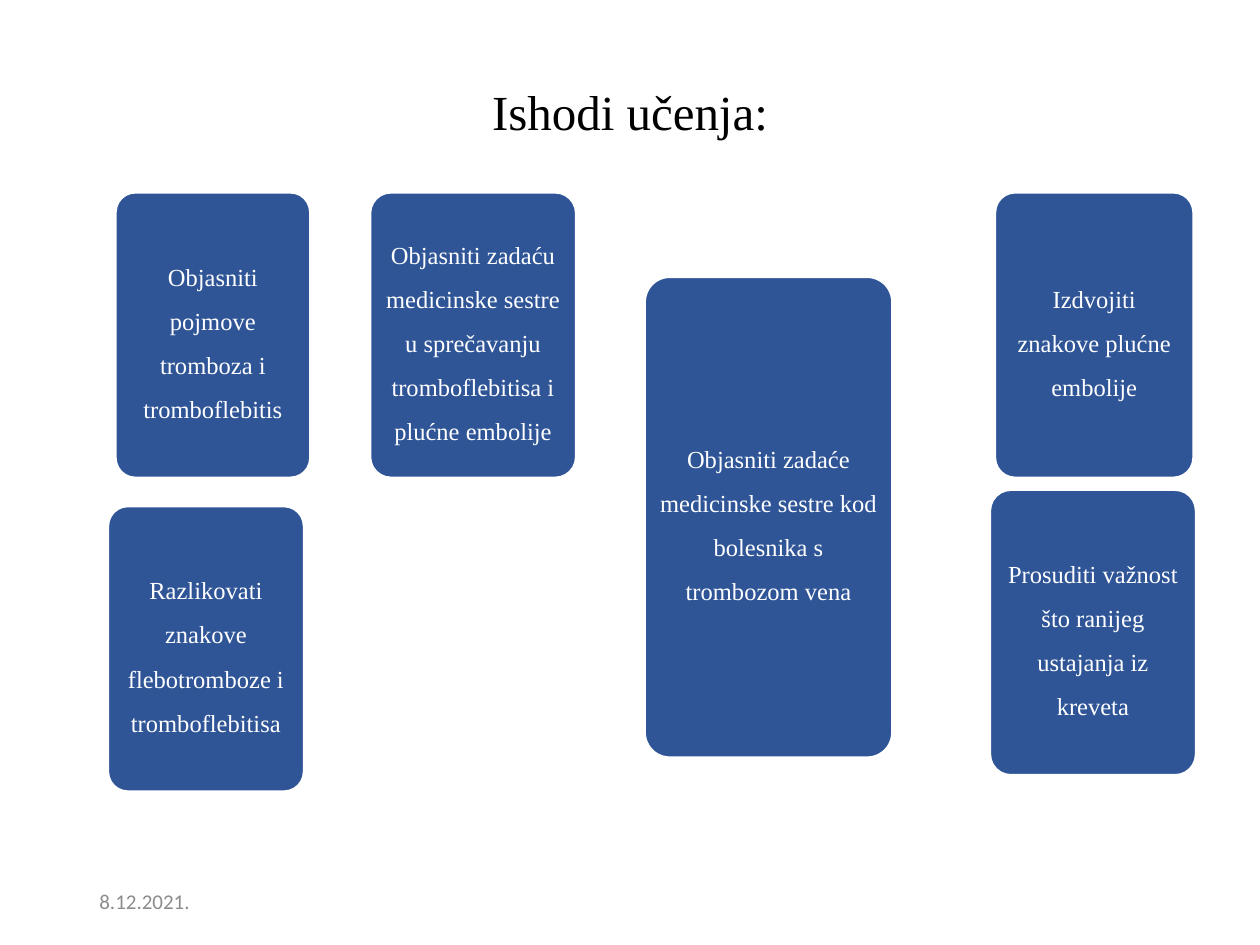
"""Builds the learning outcomes slide."""
from dataclasses import dataclass

from pptx import Presentation
from pptx.dml.color import RGBColor
from pptx.enum.shapes import MSO_SHAPE
from pptx.enum.text import MSO_ANCHOR, PP_ALIGN
from pptx.util import Inches, Pt

ROUNDED = MSO_SHAPE.ROUNDED_RECTANGLE
MIDDLE = MSO_ANCHOR.MIDDLE
LEFT, CENTER = PP_ALIGN.LEFT, PP_ALIGN.CENTER
TITLE_ONLY = 5
CARD_HEIGHT = 2.26
TOP_ROW = 1.53

OUTCOMES = [
    (0.86, 4.02, 1.55, CARD_HEIGHT, "Razlikovati znakove flebotromboze i tromboflebitisa"),
    (2.94, TOP_ROW, 1.63, CARD_HEIGHT,
     "Objasniti zadaću medicinske sestre u sprečavanju tromboflebitisa i plućne embolije"),
    (0.92, TOP_ROW, 1.54, CARD_HEIGHT, "Objasniti pojmove tromboza i tromboflebitis"),
    (7.9, TOP_ROW, 1.57, CARD_HEIGHT, "Izdvojiti znakove plućne embolije"),
    (5.12, 2.2, 1.96, 3.81,
     "Objasniti zadaće medicinske sestre kod bolesnika s trombozom vena"),
    (7.86, 3.89, 1.63, CARD_HEIGHT, "Prosuditi važnost što ranijeg ustajanja iz kreveta"),
]


@dataclass(frozen=True)
class Theme:
    """Holds the colours, fonts and type sizes."""

    card: RGBColor = RGBColor(0x2F, 0x55, 0x97)
    white: RGBColor = RGBColor(0xFF, 0xFF, 0xFF)
    black: RGBColor = RGBColor(0, 0, 0)
    gray: RGBColor = RGBColor(0x8C, 0x8C, 0x8C)
    serif: str = "Times New Roman"
    sans: str = "Calibri"
    title_size: Pt = Pt(28)
    card_size: Pt = Pt(14)
    date_size: Pt = Pt(12)


class SlideBuilder:
    """Adds styled elements to one slide."""

    def __init__(self, slide, theme):
        """Keeps the slide and its theme."""
        self.slide = slide
        self.theme = theme

    def set_text(self, shape, text, color, font, paragraph_format, inset=None):
        """Fills a shape with one formatted paragraph."""
        frame = shape.text_frame
        frame_format = {"text": text, "word_wrap": True, "vertical_anchor": MIDDLE}
        if inset is not None:
            sides = ("left", "top", "right", "bottom")
            frame_format.update({f"margin_{side}": Inches(inset) for side in sides})
        for name, value in frame_format.items():
            setattr(frame, name, value)
        paragraph = frame.paragraphs[0]
        run_font = paragraph.runs[0].font
        for target, values in ((paragraph, paragraph_format), (run_font, font)):
            for name, value in values.items():
                setattr(target, name, value)
        run_font.color.rgb = color

    def title(self, left, top, width, height, text):
        """Places the title placeholder."""
        shape = self.slide.shapes.title
        place = {"left": left, "top": top, "width": width, "height": height}
        for name, value in place.items():
            setattr(shape, name, Inches(value))
        font = {"name": self.theme.serif, "size": self.theme.title_size}
        self.set_text(shape, text, self.theme.black, font,
                      {"alignment": CENTER, "line_spacing": 0.9})

    def card(self, left, top, width, height, text):
        """Adds a rounded outcome card."""
        place = map(Inches, (left, top, width, height))
        shape = self.slide.shapes.add_shape(ROUNDED, *place)
        shape.adjustments[0] = 0.1
        shape.shadow.inherit = False
        shape.fill.solid()
        shape.fill.fore_color.rgb = self.theme.card
        shape.line.color.rgb = self.theme.white
        shape.line.width = Pt(1)
        font = {"name": self.theme.serif, "size": self.theme.card_size}
        self.set_text(shape, text, self.theme.white, font,
                      {"alignment": CENTER, "line_spacing": 1.5}, inset=0.06)

    def date(self, left, top, width, height, text):
        """Adds the date line."""
        place = map(Inches, (left, top, width, height))
        shape = self.slide.shapes.add_textbox(*place)
        font = {"name": self.theme.sans, "size": self.theme.date_size}
        self.set_text(shape, text, self.theme.gray, font, {"alignment": LEFT})


def main():
    """Builds and saves the presentation."""
    presentation = Presentation()
    presentation.slide_width = Inches(10)
    presentation.slide_height = Inches(7.5)
    slide = presentation.slides.add_slide(presentation.slide_layouts[TITLE_ONLY])
    builder = SlideBuilder(slide, Theme())
    builder.title(0.69, 0.29, 8.62, 1.24, "Ishodi učenja:")
    for outcome in OUTCOMES:
        builder.card(*outcome)
    builder.date(0.69, 6.95, 2.25, 0.4, "8.12.2021.")
    presentation.save("out.pptx")


if __name__ == "__main__":
    main()
